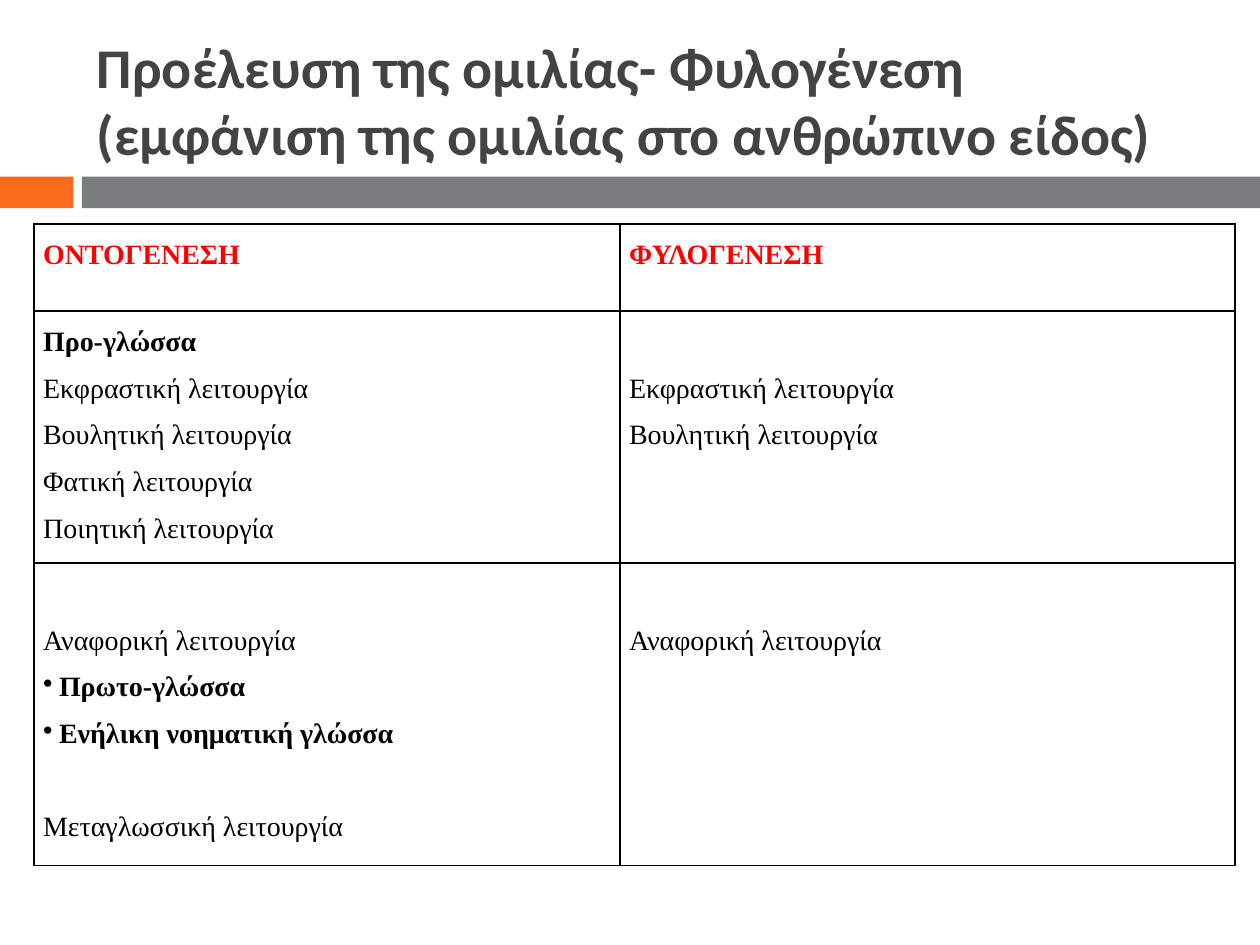
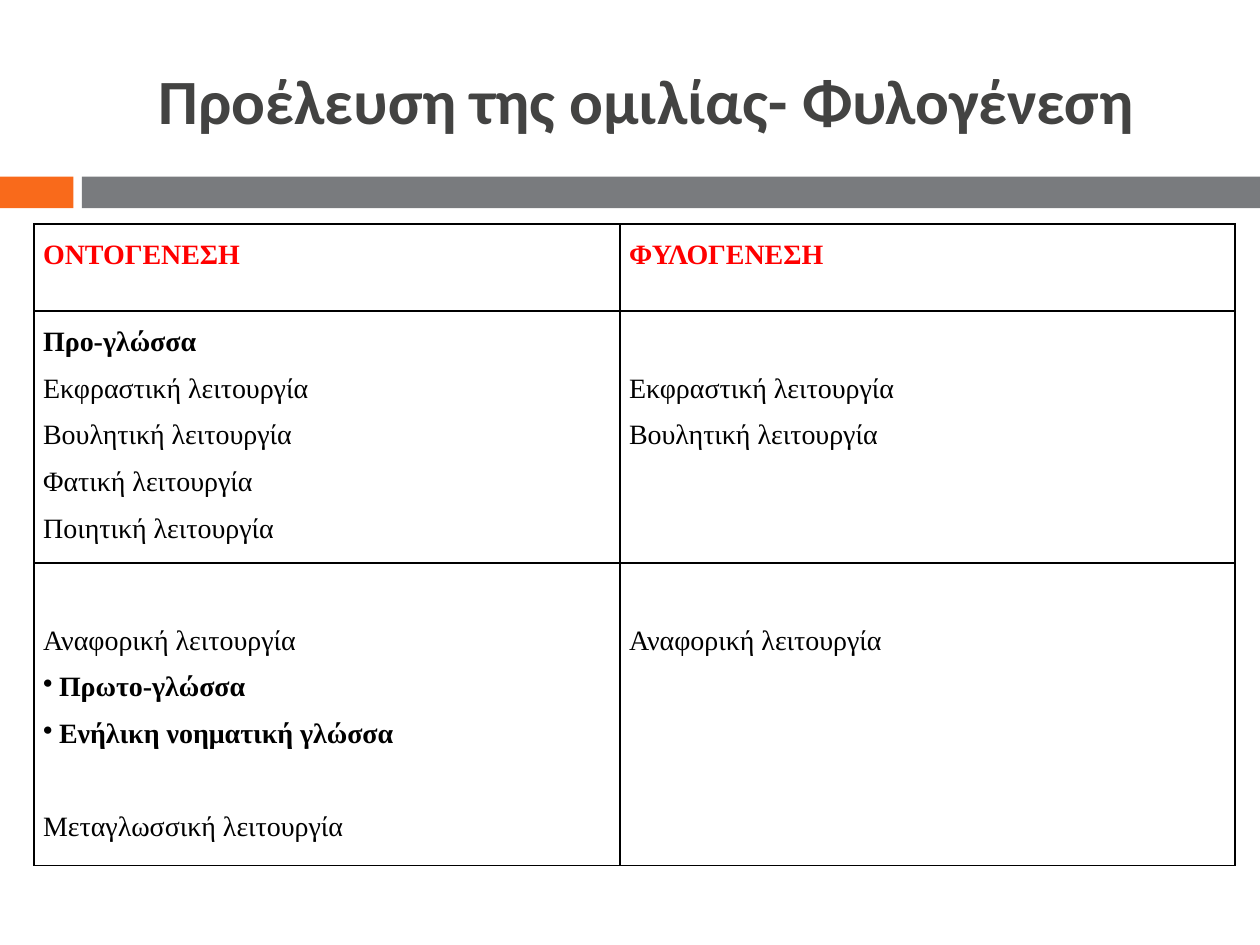
from collections import namedtuple

from lxml.etree import SubElement
from pptx import Presentation
from pptx.dml.color import RGBColor
from pptx.enum.shapes import MSO_SHAPE as Shape
from pptx.enum.text import MSO_ANCHOR as Anchor, MSO_AUTO_SIZE as AutoSize, PP_ALIGN as Align
from pptx.oxml import parse_xml
from pptx.oxml.ns import nsdecls, qn
from pptx.util import Cm, Pt

Box = namedtuple("Box", "left top width height")

ORANGE, GREY, TITLE_GREY = "F96A1B", "797B7E", "434342"
RED, BLACK = "FF0000", "000000"
TITLE_FONT, TABLE_FONT = "Calibri", "Times New Roman"

TITLE_BOX = Box(1.7, 0.64, 22.66, 2.74)
BAND_BOX = Box(0, 3.56, 25.4, 0.64)
TABLE_BOX = Box(0.69, 4.52, 24.21, 12.93)
BAND_MARK, BAND_GAP = 1.48, 0.17
FIRST_COLUMN = 11.81
ROW_HEIGHTS = (1.75, 5.08, 6.1)
LINE_PITCH = Pt(26.6)
BULLET_INDENT = Cm(0.32)

HEADING = dict(bold=True, color=RED)
STRONG = dict(bold=True)
BULLET = dict(bold=True, bullet=True)
PLAIN = {}
LATER = dict(space_before=LINE_PITCH)

ROWS = [
    [[("ΟΝΤΟΓΕΝΕΣΗ", HEADING)], [("ΦΥΛΟΓΕΝΕΣΗ", HEADING)]],
    [
        [
            ("Προ-γλώσσα", STRONG),
            ("Εκφραστική λειτουργία", PLAIN),
            ("Βουλητική λειτουργία", PLAIN),
            ("Φατική λειτουργία", PLAIN),
            ("Ποιητική λειτουργία", PLAIN),
        ],
        [("Εκφραστική λειτουργία", PLAIN), ("Βουλητική λειτουργία", PLAIN)],
    ],
    [
        [
            ("Αναφορική λειτουργία", PLAIN),
            ("Πρωτο-γλώσσα", BULLET),
            ("Ενήλικη νοηματική γλώσσα", BULLET),
            ("Μεταγλωσσική λειτουργία", LATER),
        ],
        [("Αναφορική λειτουργία", PLAIN)],
    ],
]
LOWERED_CELLS = {(1, 1), (2, 0), (2, 1)}

TITLES = [
    ("Προέλευση της ομιλίας- Φυλογένεση\v(εμφάνιση της ομιλίας στο ανθρώπινο είδος)", 32, Align.LEFT),
    ("Προέλευση της ομιλίας- Φυλογένεση", 36, Align.CENTER),
]


def rgb(value):
    return RGBColor.from_string(value)


def to_cm(box):
    return [Cm(length) for length in box]


def write(para, text, font=TABLE_FONT, size=16, color=BLACK, bold=False,
          align=Align.JUSTIFY, spacing=1.5, space_before=0, bullet=False):
    para.text = text
    para.alignment = align
    para.line_spacing = spacing
    para.space_before = space_before
    for span in para.runs:
        span.font.name = font
        span.font.size = Pt(size)
        span.font.bold = bold
        span.font.color.rgb = rgb(color)
    if bullet:
        settings = para._p.get_or_add_pPr()
        settings.set("marL", str(BULLET_INDENT))
        settings.set("indent", str(-BULLET_INDENT))
        SubElement(settings, qn("a:buChar"), char="•")


def add_title(page, box, text, size, align):
    title = page.shapes.title
    title.left, title.top, title.width, title.height = to_cm(box)
    frame = title.text_frame
    frame.word_wrap = True
    frame.auto_size = AutoSize.NONE
    frame.vertical_anchor = Anchor.MIDDLE
    write(frame.paragraphs[0], text, font=TITLE_FONT, size=size, color=TITLE_GREY,
          bold=True, align=align, spacing=1.0)


def add_band(page, box):
    bar_offset = BAND_MARK + BAND_GAP
    mark = box._replace(width=BAND_MARK)
    bar = box._replace(left=box.left + bar_offset, width=box.width - bar_offset)
    for part, color in ((mark, ORANGE), (bar, GREY)):
        band = page.shapes.add_shape(Shape.RECTANGLE, *to_cm(part))
        band.shadow.inherit = False
        band.fill.solid()
        band.fill.fore_color.rgb = rgb(color)
        band.line.fill.background()


def add_borders(cell):
    settings = cell._tc.get_or_add_tcPr()
    for position, side in enumerate("LRTB"):
        settings.insert(position, parse_xml(
            f'<a:ln{side} {nsdecls("a")} w="{Pt(1)}"><a:solidFill>'
            f'<a:srgbClr val="{BLACK}"/></a:solidFill></a:ln{side}>'))


def fill_cell(cell, lines, lowered):
    cell.fill.background()
    add_borders(cell)
    cell.margin_left = cell.margin_right = Cm(0.18)
    cell.margin_top = LINE_PITCH if lowered else 0
    cell.margin_bottom = 0
    frame = cell.text_frame
    for index, (text, style) in enumerate(lines):
        para = frame.add_paragraph() if index else frame.paragraphs[0]
        write(para, text, **style)


def add_comparison(page, box):
    table = page.shapes.add_table(len(ROWS), 2, *to_cm(box)).table
    table.first_row = table.horz_banding = False
    table.columns[0].width = Cm(FIRST_COLUMN)
    table.columns[1].width = Cm(box.width - FIRST_COLUMN)
    for row_index, (height, row) in enumerate(zip(ROW_HEIGHTS, ROWS)):
        table.rows[row_index].height = Cm(height)
        for column_index, lines in enumerate(row):
            place = row_index, column_index
            fill_cell(table.cell(*place), lines, place in LOWERED_CELLS)


def add_comparison_page(deck, title, size, align):
    page = deck.slides.add_slide(deck.slide_layouts[5])
    add_band(page, BAND_BOX)
    add_title(page, TITLE_BOX, title, size, align)
    add_comparison(page, TABLE_BOX)


def main():
    deck = Presentation()
    deck.slide_width, deck.slide_height = Cm(25.4), Cm(19.05)
    for title in TITLES:
        add_comparison_page(deck, *title)
    deck.save("out.pptx")


if __name__ == "__main__":
    main()
